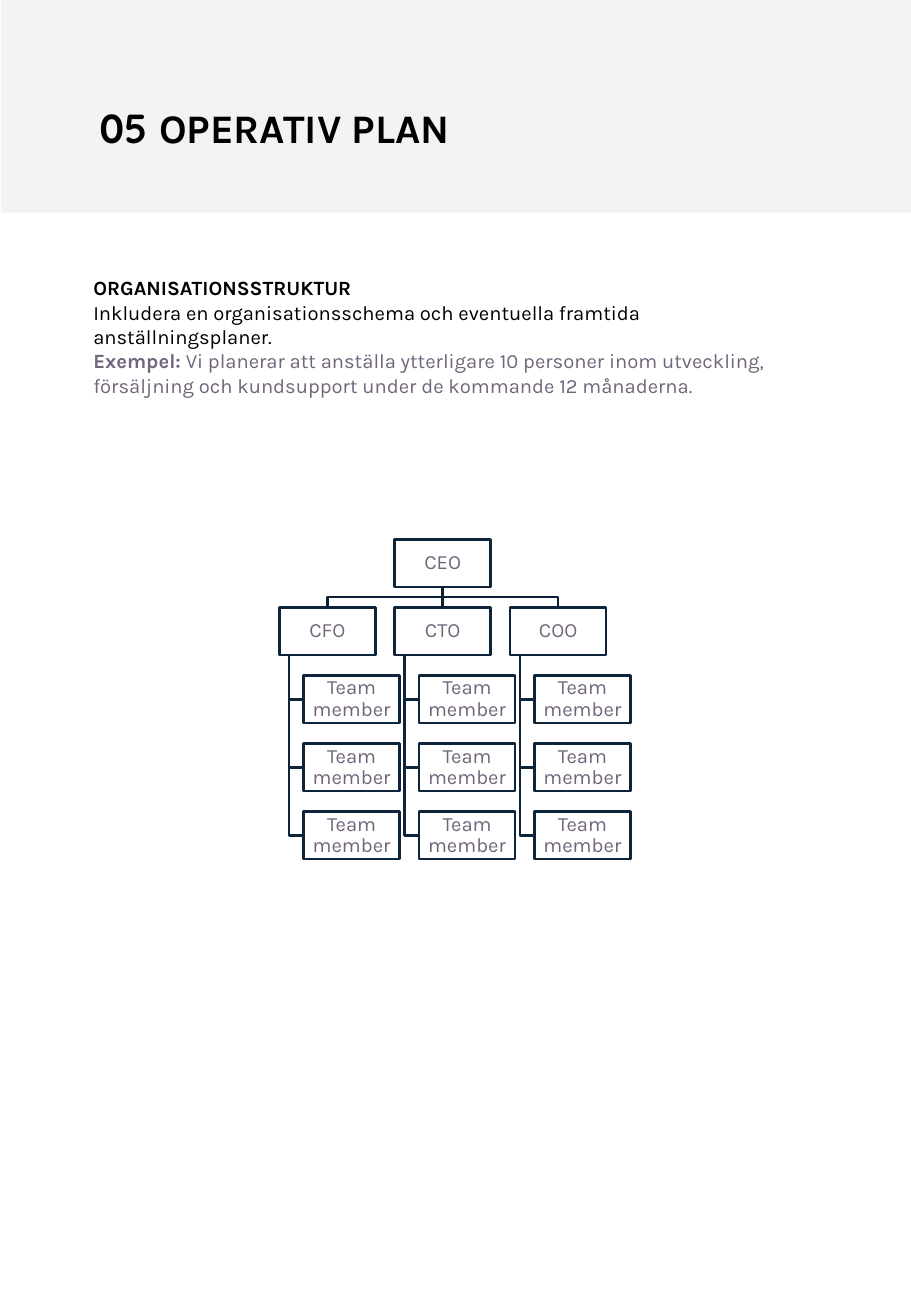
"""Build the operational plan page with its organisation chart."""
from lxml import etree
from pptx import Presentation
from pptx.dml.color import RGBColor
from pptx.enum.shapes import MSO_CONNECTOR, MSO_SHAPE
from pptx.enum.text import MSO_ANCHOR, PP_ALIGN
from pptx.oxml.ns import qn
from pptx.util import Inches, Pt

RECT, STRAIGHT = MSO_SHAPE.RECTANGLE, MSO_CONNECTOR.STRAIGHT
MIDDLE, CENTER = MSO_ANCHOR.MIDDLE, PP_ALIGN.CENTER
TOP, BOTTOM = 0, 2

TITLE = [[("05 ", "title_number", "black", True), ("OPERATIV PLAN", "body", "black", True)]]
INTRO = [
    [("ORGANISATIONSSTRUKTUR", "body", "black", True)],
    [("Inkludera en organisationsschema och eventuella framtida anställningsplaner.",
      "body", "black", False)],
    [("Exempel:", "body", "muted", True),
     (" Vi planerar att anställa ytterligare 10 personer inom utveckling, försäljning "
      "och kundsupport under de kommande 12 månaderna.", "body", "muted", False)],
]
CHIEF = "CEO"
TEAMS = [(lead, ["Team member"] * 3) for lead in ("CFO", "CTO", "COO")]

THEME = {
    "colors": {"black": "000000", "muted": "71657B", "band": "F4F3F2",
               "white": "FFFFFF", "box": "0D243B", "branch": "0B2034"},
    "fonts": {"body": "Karla", "title_number": "Quicksand"},
    "sizes": {"title": Pt(24), "text": Pt(12)},
    "line": Pt(1.5),
}

BOX_W, BOX_H = 0.79, 0.39
CHART_LEFT, CHART_TOP = 2.3, 4.44
COL_STEP, ROW_STEP = 0.95, 0.56
RAIL_INDENT, MEMBER_INDENT = 0.08, 0.2


def color(name):
    return RGBColor.from_string(THEME["colors"][name])


def set_line(s, name):
    s.line.color.rgb = color(name)
    s.line.width = THEME["line"]


def add_rect(slide, at, fill):
    s = slide.shapes.add_shape(RECT, *map(Inches, at))
    s.shadow.inherit = False
    s.fill.solid()
    s.fill.fore_color.rgb = color(fill)
    s.line.fill.background()
    return s


def add_text(slide, at, paragraphs, size):
    tf = slide.shapes.add_textbox(*map(Inches, at)).text_frame
    tf.word_wrap = True
    for i, runs in enumerate(paragraphs):
        p = tf.add_paragraph() if i else tf.paragraphs[0]
        p.font.size = THEME["sizes"][size]
        for text, font, tint, bold in runs:
            r = p.add_run()
            r.text = text
            r.font.name = THEME["fonts"][font]
            r.font.color.rgb = color(tint)
            r.font.bold = bold


def add_box(slide, x, y, text):
    s = add_rect(slide, (x, y, BOX_W, BOX_H), "white")
    set_line(s, "box")
    tf = s.text_frame
    tf.word_wrap = True
    tf.vertical_anchor = MIDDLE
    tf.margin_left = tf.margin_right = tf.margin_top = tf.margin_bottom = Inches(0.01)
    p = tf.paragraphs[0]
    p.text = text
    p.alignment = CENTER
    p.line_spacing = 0.9
    p.font.name = THEME["fonts"]["body"]
    p.font.size = THEME["sizes"]["text"]
    p.font.color.rgb = color("muted")
    return s


def add_elbow(slide, points, tint):
    start, *rest = [(Inches(x), Inches(y)) for x, y in points]
    builder = slide.shapes.build_freeform(*start)
    builder.add_line_segments(rest, close=False)
    s = builder.convert_to_shape()
    s.shadow.inherit = False
    s.fill.background()
    set_line(s, tint)


def add_straight(slide, upper, lower):
    s = slide.shapes.add_connector(STRAIGHT, 0, 0, 0, 0)
    s.begin_connect(upper, BOTTOM)
    s.end_connect(lower, TOP)
    set_line(s, "branch")
    etree.SubElement(s._element.spPr, qn("a:effectLst"))


def add_org_chart(slide):
    chief_x = CHART_LEFT + COL_STEP * (len(TEAMS) - 1) / 2
    chief_mid, chief_bottom = chief_x + BOX_W / 2, CHART_TOP + BOX_H
    lead_y = CHART_TOP + ROW_STEP
    branch_y = (chief_bottom + lead_y) / 2
    chief = add_box(slide, chief_x, CHART_TOP, CHIEF)
    for col, (lead, members) in enumerate(TEAMS):
        x = CHART_LEFT + col * COL_STEP
        mid, rail, member_x = x + BOX_W / 2, x + RAIL_INDENT, x + MEMBER_INDENT
        lead_box = add_box(slide, x, lead_y, lead)
        if abs(mid - chief_mid) < 0.01:
            add_straight(slide, chief, lead_box)
        else:
            add_elbow(slide, [(chief_mid, chief_bottom), (chief_mid, branch_y),
                              (mid, branch_y), (mid, lead_y)], "branch")
        for row, member in enumerate(members, 1):
            y = lead_y + row * ROW_STEP
            center_y = y + BOX_H / 2
            add_elbow(slide, [(rail, lead_y + BOX_H), (rail, center_y),
                              (member_x, center_y)], "box")
            add_box(slide, member_x, y, member)


def main():
    prs = Presentation()
    prs.slide_width, prs.slide_height = Inches(7.5), Inches(10.83)
    slide = prs.slides.add_slide(prs.slide_layouts[6])
    add_rect(slide, (0.01, 0, 7.49, 1.75), "band")
    add_text(slide, (0.72, 0.8, 6.07, 0.5), TITLE, "title")
    add_text(slide, (0.67, 2.22, 6.2, 0.91), INTRO, "text")
    add_org_chart(slide)
    prs.save("out.pptx")


if __name__ == "__main__":
    main()
